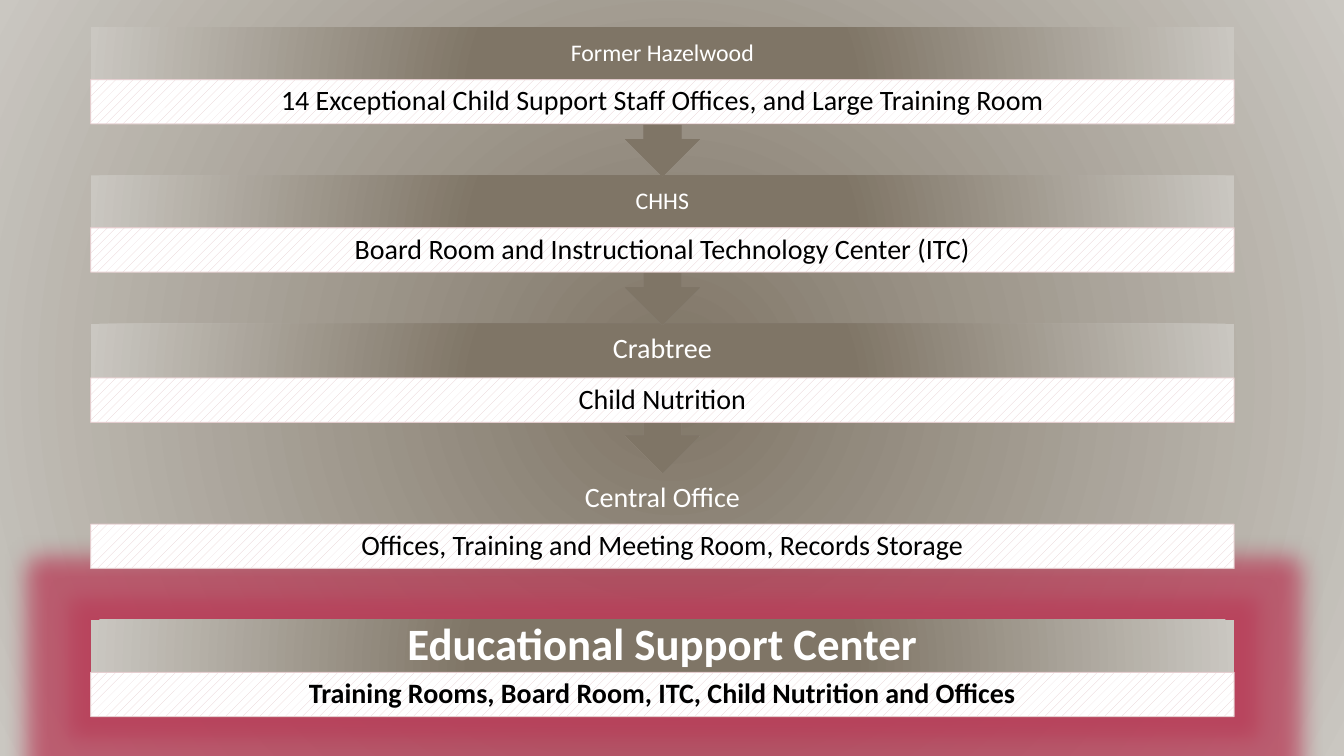
"""Build a slide of offices flowing down into one support center."""
from lxml.etree import SubElement
from pptx import Presentation
from pptx.dml.color import RGBColor
from pptx.enum.dml import MSO_PATTERN_TYPE as PATTERN
from pptx.enum.shapes import MSO_SHAPE as SHAPE
from pptx.enum.text import MSO_ANCHOR as ANCHOR, PP_ALIGN as ALIGN
from pptx.oxml.ns import qn
from pptx.util import Inches, Pt

STEPS = [
    ("Former Hazelwood", "14 Exceptional Child Support Staff Offices, and Large Training Room",
     dict(size=17, inset=0.13)),
    ("CHHS", "Board Room and Instructional Technology Center (ITC)",
     dict(size=17, inset=0.13)),
    ("Crabtree", "Child Nutrition", dict(size=20, inset=0.16)),
    ("Central Office", "Offices, Training and Meeting Room, Records Storage",
     dict(size=20, inset=0.16)),
    ("Educational Support Center", "Training Rooms, Board Room, ITC, Child Nutrition and Offices",
     dict(size=32, inset=0.25, bold=True)),
]


def rgb(value):
    return RGBColor.from_string(value)


def write(s, text, size=20, color="000000", bold=False, inset=0.16, inset_y=None):
    tf = s.text_frame
    tf.word_wrap = True
    tf.vertical_anchor = ANCHOR.MIDDLE
    tf.margin_left = tf.margin_right = Inches(inset)
    tf.margin_top = tf.margin_bottom = Inches(inset if inset_y is None else inset_y)
    p = tf.paragraphs[0]
    p.alignment = ALIGN.CENTER
    p.line_spacing = 0.9
    r = p.add_run()
    r.text = text
    r.font.name = "Calibri"
    r.font.size = Pt(size)
    r.font.bold = bold
    r.font.color.rgb = rgb(color)


class Flow:
    """Hold the style, the row grid and the current slide."""

    dark, light, tint, white, glow_color = "7F7566", "CAC7C1", "E6CDCF", "FFFFFF", "B83D58"
    left, top, width, pitch = 0.9, 0.27, 11.34, 1.47
    head, strip_height = 0.52, 0.44

    def __init__(self, prs):
        self.slide = prs.slides.add_slide(prs.slide_layouts[6])

    def box(self, row, height, offset=0):
        y = self.top + row * self.pitch + offset
        return [Inches(v) for v in (self.left, y, self.width, height)]

    def shape(self, kind, *box):
        s = self.slide.shapes.add_shape(kind, *box)
        s.shadow.inherit = False
        s.line.fill.background()
        return s

    def radial(self, fill, element, start):
        fill.gradient()
        for stop, color, position in zip(fill.gradient_stops, (self.dark, self.light), (start, 1)):
            stop.color.rgb = rgb(color)
            stop.position = position
        lin = next(element.iter(qn("a:lin")))
        grad = lin.getparent()
        grad.remove(lin)
        circle = SubElement(grad, qn("a:path"), path="circle")
        SubElement(circle, qn("a:fillToRect"), l="50000", t="50000", r="50000", b="50000")

    def background(self):
        self.radial(self.slide.background.fill, self.slide.element, 0)

    def callout(self, row):
        s = self.shape(SHAPE.UP_ARROW_CALLOUT, *self.box(row, 1.48))
        s.rotation = 180
        self.radial(s.fill, s.element, 0.33)

    def panel(self, row):
        s = self.shape(SHAPE.RECTANGLE, *self.box(row, self.head + self.strip_height))
        self.radial(s.fill, s.element, 0.33)
        effects = next(s.element.iter(qn("a:effectLst")))
        glow = SubElement(effects, qn("a:glow"), rad=str(Inches(0.44)))
        color = SubElement(glow, qn("a:srgbClr"), val=self.glow_color)
        SubElement(color, qn("a:alpha"), val="75000")

    def heading(self, row, text, **style):
        s = self.slide.shapes.add_textbox(*self.box(row, self.head))
        write(s, text, color=self.white, **style)

    def strip(self, row, text, bold=False, drop=0):
        s = self.shape(SHAPE.RECTANGLE, *self.box(row, self.strip_height, self.head + drop))
        s.fill.patterned()
        s.fill.pattern = PATTERN.PERCENT_20
        s.fill.fore_color.rgb = rgb(self.tint)
        s.fill.back_color.rgb = rgb(self.white)
        s.line.color.rgb = rgb(self.tint)
        s.line.width = Pt(0.75)
        color = next(s.line._ln.iter(qn("a:srgbClr")))
        SubElement(color, qn("a:alpha"), val="90000")
        write(s, text, bold=bold, inset_y=0.03)


def main():
    prs = Presentation()
    prs.slide_width, prs.slide_height = Inches(13.33), Inches(7.5)
    flow = Flow(prs)
    flow.background()
    last = len(STEPS) - 1
    for row, (title, detail, style) in reversed(list(enumerate(STEPS))):
        if row == last:
            flow.panel(row)
        elif row < last - 1:
            flow.callout(row)
        flow.heading(row, title, **style)
        flow.strip(row, detail, bold=row == last, drop=0.02 if title == "Crabtree" else 0)
    prs.save("out.pptx")


if __name__ == "__main__":
    main()
